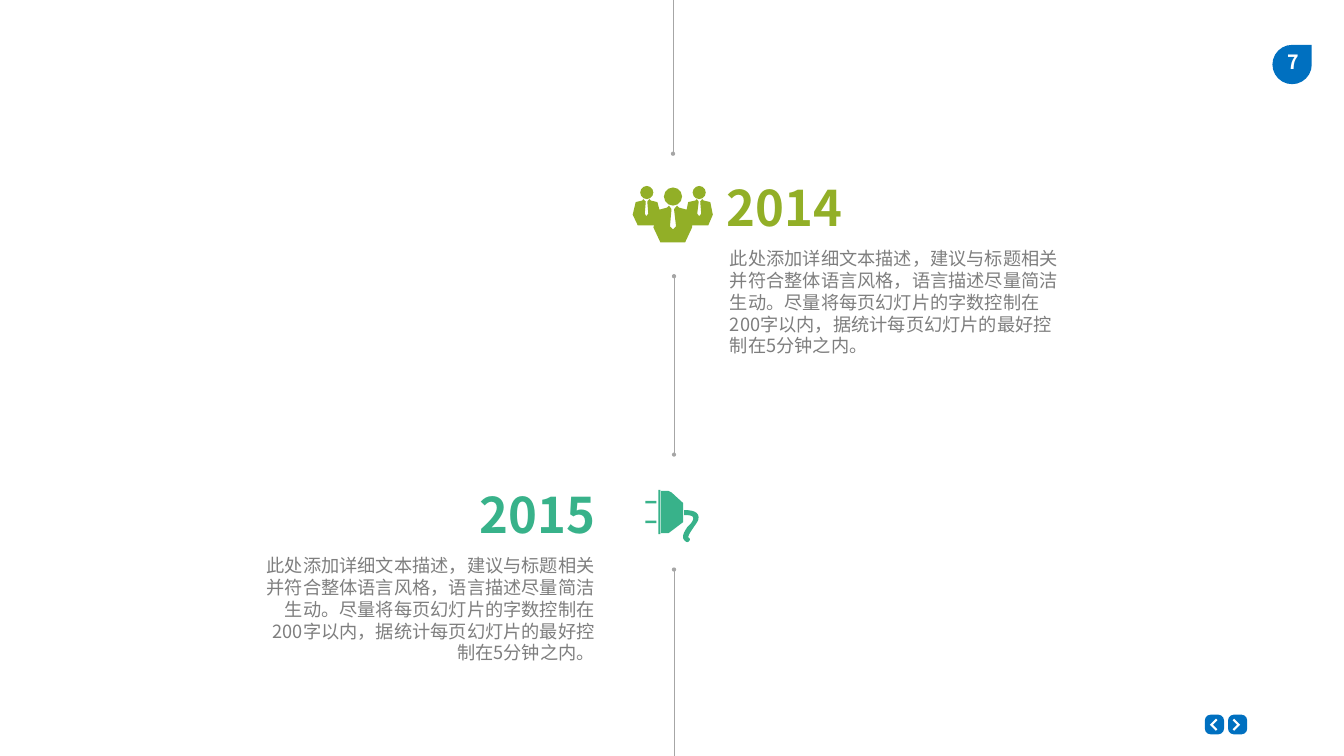
from lxml import etree
from pptx import Presentation
from pptx.dml.color import RGBColor
from pptx.enum.shapes import MSO_CONNECTOR, MSO_SHAPE
from pptx.enum.text import MSO_ANCHOR, PP_ALIGN
from pptx.oxml.ns import qn
from pptx.util import Inches, Pt

LEFT, CENTER, RIGHT = PP_ALIGN.LEFT, PP_ALIGN.CENTER, PP_ALIGN.RIGHT
TOP, MIDDLE = MSO_ANCHOR.TOP, MSO_ANCHOR.MIDDLE
OVAL, RECT = MSO_SHAPE.OVAL, MSO_SHAPE.RECTANGLE
FONT = "Noto Sans CJK SC"
BLUE, GREEN, TEAL = "0070C0", "92AF27", "38B28A"
GRAY, LINE, WHITE = "7E7E7E", "A6A6A6", "FFFFFF"

BODY = ("此处添加详细文本描述，建议与标题相关并符合整体语言风格，语言描述尽量简洁生动。"
        "尽量将每页幻灯片的字数控制在200字以内，据统计每页幻灯片的最好控制在5分钟之内。")

# year, colour, alignment, year box, body box
EVENTS = [
    ("2014", GREEN, LEFT, (14.22, 3.47, 9.22, 1.29), (14.28, 4.81, 7.14, 2.13)),
    ("2015", TEAL, RIGHT, (3.59, 9.56, 8.41, 1.29), (4.86, 10.9, 7.14, 2.04)),
]

# x, start y, end y, dotted ends
TIMELINE = [
    (13.35, 3.05, 0, ["headEnd"]),
    (13.37, 5.48, 9.02, ["headEnd", "tailEnd"]),
    (13.37, 11.3, 15, ["headEnd"]),
]

# left, top, diameter
HEADS = [(13.17, 3.72, 0.36), (12.7, 3.69, 0.26), (13.74, 3.69, 0.26)]
SUITS = [
    (14.14, 4.26), (14.09, 4.01), (13.96, 3.98), (13.93, 3.95), (13.89, 4),
    (13.91, 4.24), (13.87, 4.29), (13.83, 4.24), (13.86, 4), (13.82, 3.95),
    (13.79, 3.98), (13.65, 4.01), (13.62, 4.16), (13.47, 4.12), (13.43, 4.08),
    (13.37, 4.15), (13.41, 4.49), (13.35, 4.55), (13.29, 4.49), (13.32, 4.15),
    (13.27, 4.08), (13.23, 4.12), (13.08, 4.16), (13.04, 4.01), (12.91, 3.98),
    (12.88, 3.95), (12.84, 4), (12.86, 4.24), (12.82, 4.29), (12.79, 4.24),
    (12.81, 4), (12.76, 3.95), (12.74, 3.98), (12.61, 4.01), (12.55, 4.26),
    (12.65, 4.47), (12.98, 4.47), (12.96, 4.51), (13.1, 4.81), (13.59, 4.81),
    (13.73, 4.51), (13.73, 4.47), (14.05, 4.47),
]

PLUG_BODY = [(13.11, 9.74), (13.26, 9.74), (13.32, 9.77), (13.55, 9.98),
             (13.55, 10.36), (13.26, 10.58), (13.11, 10.58)]
PLUG_BARS = [(12.8, 9.94, 0.22, 0.05), (12.8, 10.33, 0.22, 0.05), (13.06, 9.72, 0.04, 0.88)]
CORD_START = (13.57, 10.22)
# each curve: two control points and an end point
CORD = [
    [(13.64, 10.22), (13.74, 10.22), (13.75, 10.27)],
    [(13.77, 10.32), (13.68, 10.42), (13.64, 10.45)],
    [(13.59, 10.53), (13.48, 10.67), (13.61, 10.75)],
    [(13.66, 10.78), (13.72, 10.69), (13.66, 10.67)],
    [(13.61, 10.64), (13.83, 10.38), (13.85, 10.32)],
    [(13.9, 10.14), (13.7, 10.12), (13.57, 10.12)],
]

# button left, chevron tip x, direction of the chevron's arms
BUTTONS = [(23.9, 24.0, 1), (24.36, 24.6, -1)]
CHEVRON = [(0, 0), (0.12, -0.12), (0.15, -0.09), (0.06, 0), (0.15, 0.09), (0.12, 0.12)]


def paint(shape, color):
    shape.shadow.inherit = False
    shape.fill.solid()
    shape.fill.fore_color.rgb = RGBColor.from_string(color)
    shape.line.fill.background()


def add_preset(s, kind, box, color):
    sp = s.shapes.add_shape(kind, *map(Inches, box))
    paint(sp, color)
    return sp


def add_outline(s, points, color):
    pts = [(Inches(x), Inches(y)) for x, y in points]
    builder = s.shapes.build_freeform(*pts[0])
    builder.add_line_segments(pts[1:], close=True)
    paint(builder.convert_to_shape(), color)


def flatten(start, curves, steps=8):
    """Turn a chain of cubic curves into points."""
    points = [start]
    for a, b, c in curves:
        p0 = points[-1]
        for i in range(1, steps + 1):
            t = i / steps
            u = 1 - t
            points.append(tuple(
                u**3 * p0[k] + 3 * u * u * t * a[k] + 3 * u * t * t * b[k] + t**3 * c[k]
                for k in (0, 1)))
    return points


def add_text(s, text, box, size, color, align, bold=False, anchor=TOP, wrap=True):
    tf = s.shapes.add_textbox(*map(Inches, box)).text_frame
    tf.text = text
    tf.word_wrap = wrap
    tf.vertical_anchor = anchor
    tf.margin_left = tf.margin_right = Inches(0.2)
    tf.margin_top = tf.margin_bottom = Inches(0.1)
    p = tf.paragraphs[0]
    p.alignment = align
    font = p.runs[0].font
    font.name, font.size, font.bold = FONT, Pt(size), bold
    font.color.rgb = RGBColor.from_string(color)
    etree.SubElement(p.runs[0]._r.rPr, qn("a:ea"), typeface=FONT)


def add_timeline_part(s, x, start, end, dots):
    line = s.shapes.add_connector(
        MSO_CONNECTOR.STRAIGHT, Inches(x), Inches(start), Inches(x), Inches(end))
    line.line.color.rgb = RGBColor.from_string(LINE)
    line.line.width = Pt(0.5)
    for dot in dots:
        etree.SubElement(line.line._get_or_add_ln(), qn("a:" + dot), type="oval")
    etree.SubElement(line._element.spPr, qn("a:effectLst"))


def main():
    prs = Presentation()
    prs.slide_width, prs.slide_height = Inches(26.66), Inches(15)
    s = prs.slides.add_slide(prs.slide_layouts[6])

    for left, tip, direction in BUTTONS:
        button = add_preset(s, MSO_SHAPE.ROUNDED_RECTANGLE, (left, 14.18, 0.38, 0.39), BLUE)
        button.adjustments[0] = 0.3
        add_outline(s, [(tip + direction * x, 14.38 + y) for x, y in CHEVRON], WHITE)

    add_preset(s, MSO_SHAPE.TEAR, (25.24, 0.89, 0.78, 0.78), BLUE)
    add_text(s, "7", (25.16, 0.9, 0.97, 0.67), 28, WHITE, CENTER, bold=True, wrap=False)

    for year, color, align, year_box, body_box in EVENTS:
        add_text(s, BODY, body_box, 26, GRAY, align)
        add_text(s, year, year_box, 70, color, align, bold=True, anchor=MIDDLE)

    for part in TIMELINE:
        add_timeline_part(s, *part)

    for left, top, size in HEADS:
        add_preset(s, OVAL, (left, top, size, size), GREEN)
    add_outline(s, SUITS, GREEN)

    add_outline(s, flatten(CORD_START, CORD), TEAL)
    add_outline(s, PLUG_BODY, TEAL)
    for bar in PLUG_BARS:
        add_preset(s, RECT, bar, TEAL)

    prs.save("out.pptx")


if __name__ == "__main__":
    main()
